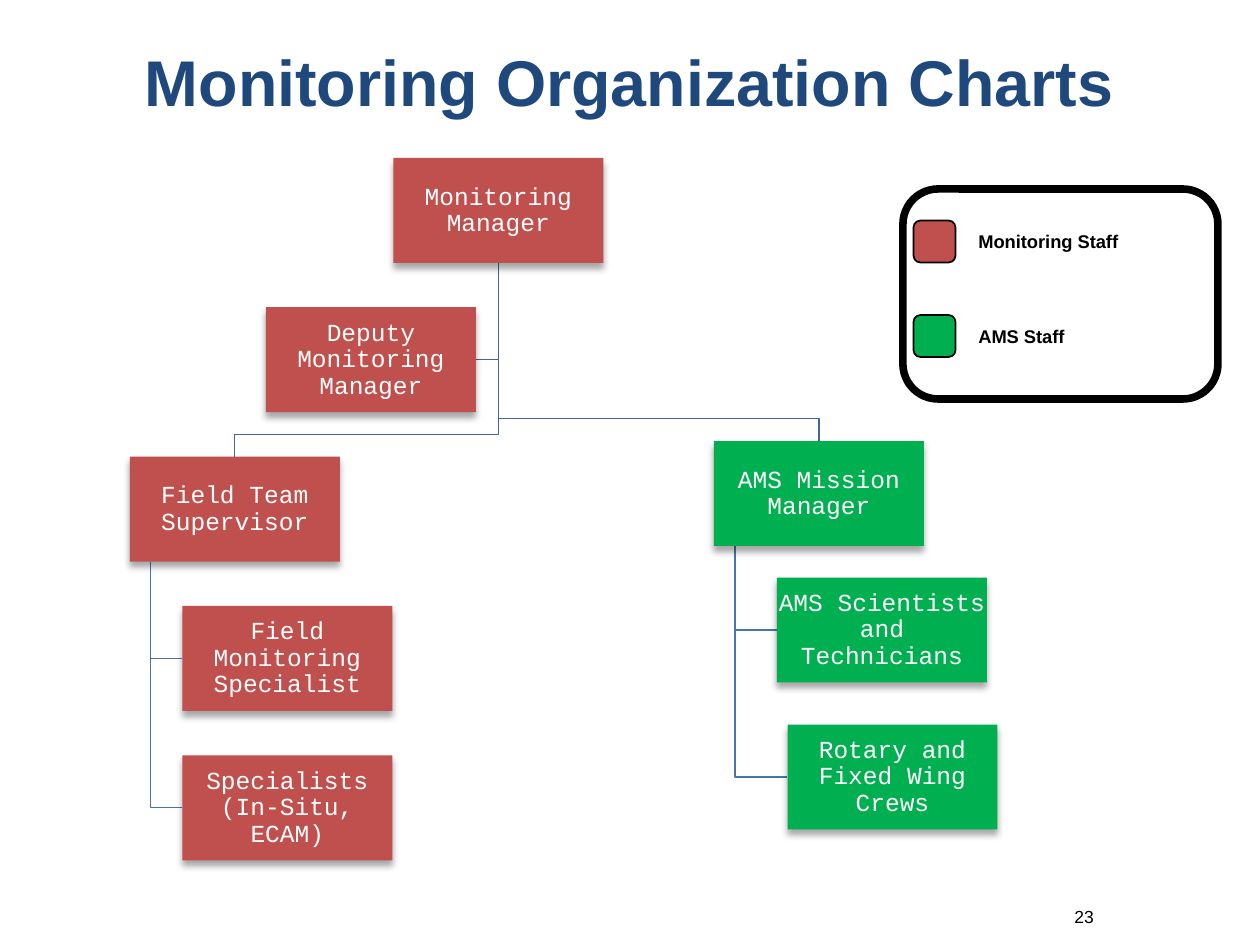
from dataclasses import dataclass
from typing import Optional

from lxml.etree import SubElement
from pptx import Presentation
from pptx.dml.color import RGBColor
from pptx.enum.shapes import MSO_SHAPE
from pptx.enum.text import MSO_ANCHOR, PP_ALIGN
from pptx.oxml.ns import qn
from pptx.util import Pt


@dataclass(frozen=True)
class Theme:
    monitoring: str = "C0504D"
    ams: str = "00B050"
    title: str = "1F497D"
    upper_line: str = "3F6797"
    lower_line: str = "4875AC"
    black: str = "000000"
    white: str = "FFFFFF"
    sans: str = "Arial"
    mono: str = "Courier New"
    title_size: float = 36.9
    role_size: float = 14
    legend_size: float = 10.5
    number_size: float = 10


@dataclass(frozen=True)
class Role:
    name: str
    left: float
    top: float
    color: str

    @property
    def center(self) -> float:
        return self.left + ROLE_WIDTH / 2

    @property
    def middle(self) -> float:
        return self.top + ROLE_HEIGHT / 2

    @property
    def right(self) -> float:
        return self.left + ROLE_WIDTH

    @property
    def bottom(self) -> float:
        return self.top + ROLE_HEIGHT


@dataclass(frozen=True)
class LegendEntry:
    label: str
    top: float
    color: str


THEME = Theme()
ROLE_WIDTH, ROLE_HEIGHT = 120, 60
ROW_TOP, ROW_PITCH = 90.2, 85.35
HANG = 12       # from a role's left edge to the trunk below it
ELBOW = 12.75   # from a branch's bend down to its role


def row(index: int) -> float:
    return ROW_TOP + index * ROW_PITCH


MANAGER = Role("Monitoring Manager", 224.8, row(0), THEME.monitoring)
DEPUTY = Role("Deputy Monitoring Manager", 152, row(1), THEME.monitoring)
SUPERVISOR = Role("Field Team Supervisor", 74.2, row(2), THEME.monitoring)
FIELD_STAFF = [
    Role("Field Monitoring Specialist", 104.2, row(3), THEME.monitoring),
    Role("Specialists (In-Situ, ECAM)", 104.2, row(4), THEME.monitoring),
]
AMS_MANAGER = Role("AMS Mission Manager", 408, 252, THEME.ams)
AMS_STAFF = [
    Role("AMS Scientists and Technicians", 444, 330, THEME.ams),
    Role("Rotary and Fixed Wing Crews", 450, 414, THEME.ams),
]
LEGEND = [
    LegendEntry("Monitoring Staff", 126, THEME.monitoring),
    LegendEntry("AMS Staff", 180, THEME.ams),
]


def write(frame, text: str, font: str, size: float, color: str, bold: bool = False,
          alignment=PP_ALIGN.LEFT, anchor=MSO_ANCHOR.TOP):
    frame.word_wrap = True
    frame.vertical_anchor = anchor
    paragraph = frame.paragraphs[0]
    paragraph.alignment = alignment
    run = paragraph.add_run()
    run.text = text
    run.font.name = font
    run.font.size = Pt(size)
    run.font.bold = bold
    run.font.color.rgb = RGBColor.from_string(color)
    return paragraph


def add_text_frame(slide, left: float, top: float, width: float, height: float):
    return slide.shapes.add_textbox(Pt(left), Pt(top), Pt(width), Pt(height)).text_frame


def add_box(slide, kind, left: float, top: float, width: float, height: float,
            fill: str, line_width: Optional[float] = None):
    shape = slide.shapes.add_shape(kind, Pt(left), Pt(top), Pt(width), Pt(height))
    shape.shadow.inherit = False
    shape.fill.solid()
    shape.fill.fore_color.rgb = RGBColor.from_string(fill)
    if line_width is None:
        shape.line.fill.background()
    else:
        shape.line.color.rgb = RGBColor.from_string(THEME.black)
        shape.line.width = Pt(line_width)
    return shape


def add_drop_shadow(shape) -> None:
    effects = shape.element.spPr.find(qn("a:effectLst"))
    shadow = SubElement(effects, qn("a:outerShdw"), blurRad=str(Pt(4)), dist=str(Pt(3)),
                        dir="5400000", rotWithShape="0")
    color = SubElement(shadow, qn("a:srgbClr"), val=THEME.black)
    SubElement(color, qn("a:alpha"), val="35000")


def add_role(slide, role: Role) -> None:
    shape = add_box(slide, MSO_SHAPE.RECTANGLE, role.left, role.top,
                    ROLE_WIDTH, ROLE_HEIGHT, role.color)
    add_drop_shadow(shape)
    frame = shape.text_frame
    frame.margin_left = frame.margin_right = Pt(0.7)
    frame.margin_top = frame.margin_bottom = Pt(0.7)
    paragraph = write(frame, role.name, THEME.mono, THEME.role_size, THEME.white,
                      alignment=PP_ALIGN.CENTER, anchor=MSO_ANCHOR.MIDDLE)
    paragraph.line_spacing = 0.9


def add_path(slide, points: list[tuple[float, float]], color: str) -> None:
    start, *rest = [(Pt(x), Pt(y)) for x, y in points]
    builder = slide.shapes.build_freeform(*start)
    builder.add_line_segments(rest, close=False)
    shape = builder.convert_to_shape()
    shape.shadow.inherit = False
    shape.fill.background()
    shape.line.color.rgb = RGBColor.from_string(color)
    shape.line.width = Pt(0.75)


def link_side(slide, trunk: float, parent: Role, edge: float, child: Role, color: str) -> None:
    """Run down a trunk from the parent, then sideways to the child's edge."""
    add_path(slide, [(trunk, parent.bottom), (trunk, child.middle), (edge, child.middle)], color)


def link_top(slide, parent: Role, child: Role) -> None:
    bend = child.top - ELBOW
    add_path(slide, [(parent.center, parent.bottom), (parent.center, bend),
                     (child.center, bend), (child.center, child.top)], THEME.upper_line)


def add_organization(slide) -> None:
    link_side(slide, MANAGER.center, MANAGER, DEPUTY.right, DEPUTY, THEME.upper_line)
    for lead, staff in ((AMS_MANAGER, AMS_STAFF), (SUPERVISOR, FIELD_STAFF)):
        for member in staff:
            link_side(slide, lead.left + HANG, lead, member.left, member, THEME.lower_line)
        link_top(slide, MANAGER, lead)
    for role in (MANAGER, SUPERVISOR, *FIELD_STAFF, AMS_MANAGER, *AMS_STAFF, DEPUTY):
        add_role(slide, role)


def add_legend(slide) -> None:
    add_box(slide, MSO_SHAPE.ROUNDED_RECTANGLE, 516, 108, 180, 120, THEME.white, 4.33)
    for entry in LEGEND:
        add_box(slide, MSO_SHAPE.ROUNDED_RECTANGLE, 522, entry.top, 24, 24, entry.color, 1)
        frame = add_text_frame(slide, 552, entry.top + 2, 132, 20)
        write(frame, entry.label, THEME.sans, THEME.legend_size, THEME.black, bold=True)


def main() -> None:
    presentation = Presentation()
    presentation.slide_width, presentation.slide_height = Pt(720), Pt(540)
    slide = presentation.slides.add_slide(presentation.slide_layouts[6])

    write(add_text_frame(slide, 581, 504.7, 51.1, 28.8), "23", THEME.sans, THEME.number_size,
          THEME.black, alignment=PP_ALIGN.RIGHT, anchor=MSO_ANCHOR.BOTTOM)
    title_frame = add_text_frame(slide, 36, 21.6, 648, 90)
    title_frame.margin_top = Pt(2.6)
    write(title_frame, "Monitoring Organization Charts", THEME.sans, THEME.title_size,
          THEME.title, bold=True, alignment=PP_ALIGN.CENTER)
    add_organization(slide)
    add_legend(slide)
    presentation.save("out.pptx")


if __name__ == "__main__":
    main()
